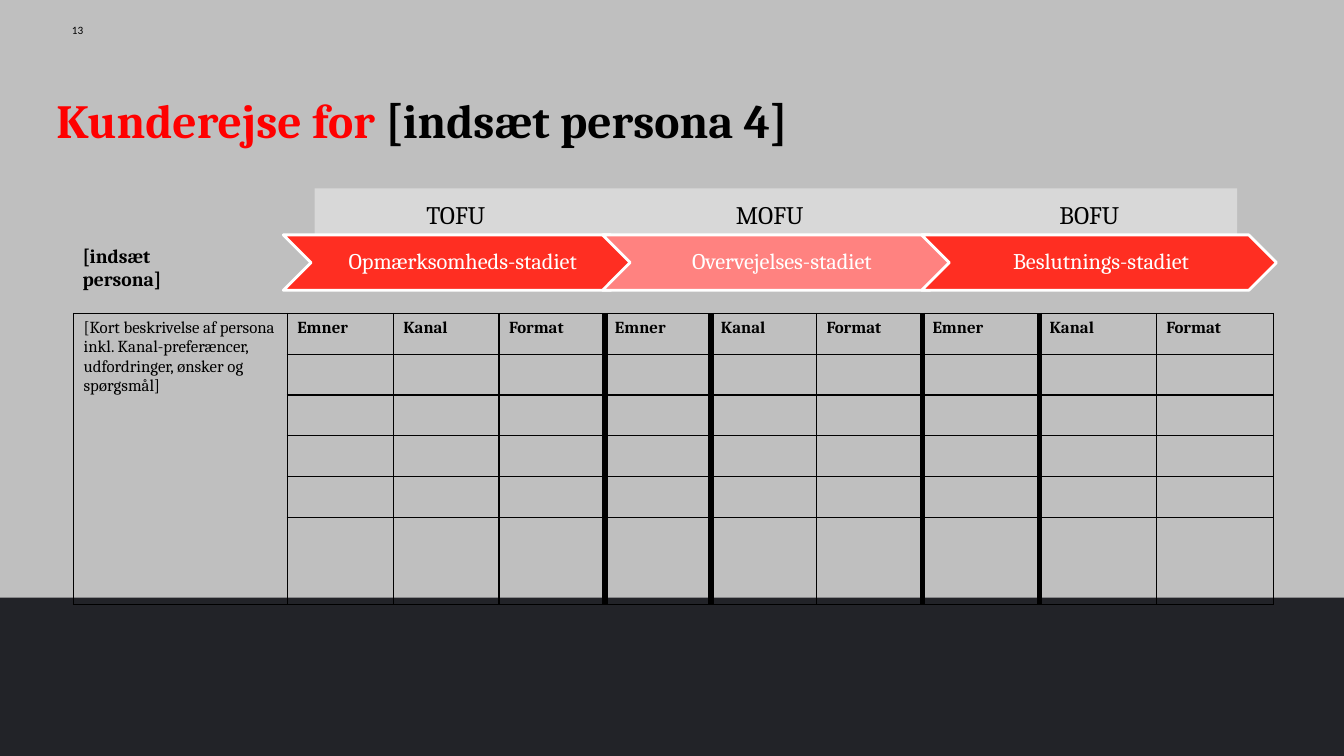
from lxml import etree
from pptx import Presentation, util as u
from pptx.dml.color import RGBColor
from pptx.enum import shapes, text
from pptx.oxml.ns import qn

BLACK, WHITE, GREY, RED = "000000", "FFFFFF", "BFBFBF", "FF0000"
SLIDE_W, SLIDE_H = 13.33, 7.5
CELL_INSETS = (0.1, 0.05, 0.1, 0.05)
# Stage: label, label left and width, name, colour
STAGES = [
    ("TOFU", 4.13, 0.88, "Opmærksomheds-stadiet", "FF2E22"),
    ("MOFU", 7.2, 0.97, "Overvejelses-stadiet", "FF8280"),
    ("BOFU", 10.41, 0.9, "Beslutnings-stadiet", "FF2E22"),
]
TOPICS = ["Emner", "Kanal", "Format"]
DESCRIPTION = ("[Kort beskrivelse af persona inkl. Kanal-preferæncer, "
               "udfordringer, ønsker og spørgsmål]")


def color(value):
    return RGBColor.from_string(value)


def inches(box):
    return [u.Inches(length) for length in box]


def style_font(paragraph, size, bold=False, fill=BLACK, name="Cambria"):
    font = paragraph.font
    font.name, font.size, font.bold = name, u.Pt(size), bold
    font.color.rgb = color(fill)


def set_frame(frame, insets, anchor):
    frame.word_wrap = True
    frame.auto_size = text.MSO_AUTO_SIZE.NONE
    frame.vertical_anchor = anchor
    (frame.margin_left, frame.margin_top,
     frame.margin_right, frame.margin_bottom) = inches(insets)


def add_label(slide, box, words, size, insets=CELL_INSETS,
              anchor=text.MSO_ANCHOR.TOP, align=text.PP_ALIGN.LEFT, **font):
    frame = slide.shapes.add_textbox(*inches(box)).text_frame
    set_frame(frame, insets, anchor)
    paragraph = frame.paragraphs[0]
    paragraph.text = words
    paragraph.alignment = align
    style_font(paragraph, size, **font)
    return paragraph


def add_block(slide, box, fill, kind=shapes.MSO_SHAPE.RECTANGLE):
    block = slide.shapes.add_shape(kind, *inches(box))
    block.shadow.inherit = False
    block.fill.solid()
    block.fill.fore_color.rgb = color(fill)
    block.line.fill.background()
    return block


def place_title(slide, box):
    title = slide.shapes.title
    title.left, title.top, title.width, title.height = inches(box)
    title.fill.solid()
    title.fill.fore_color.rgb = color(GREY)
    set_frame(title.text_frame, (0, 0, 0, 0), text.MSO_ANCHOR.BOTTOM)
    paragraph = title.text_frame.paragraphs[0]
    paragraph.alignment = text.PP_ALIGN.LEFT
    paragraph.line_spacing = 1.03
    style_font(paragraph, 34, bold=True)
    for words, fill in (("Kunderejse for ", RED), ("[indsæt persona 4]", BLACK)):
        run = paragraph.add_run()
        run.text = words
        run.font.color.rgb = color(fill)


def add_stages(slide, box):
    left, top, width, height = box
    chevron_w = 3.52
    step = (width - chevron_w) / (len(STAGES) - 1)
    # Band behind the funnel labels
    add_block(slide, (left + 0.31, top - 0.46, 9.15, 0.76), "D8D8D8")
    for index, (label, label_left, label_w, name, fill) in enumerate(STAGES):
        x = left + index * step
        chevron = add_block(slide, (x, top, chevron_w, height), fill,
                            shapes.MSO_SHAPE.CHEVRON)
        chevron.adjustments[0] = 0.5
        chevron.line.color.rgb = color(WHITE)
        chevron.line.width = u.Pt(2)
        stage = add_label(slide, (x + 0.38, top, 2.75, height), name, 16,
                          insets=(0.07, 0.02, 0.02, 0.02),
                          anchor=text.MSO_ANCHOR.MIDDLE,
                          align=text.PP_ALIGN.CENTER, fill=WHITE)
        stage.line_spacing = 0.9
        add_label(slide, (label_left, top - 0.4, label_w, 0.4), label, 18)


def set_borders(cell, widths):
    properties = cell._tc.get_or_add_tcPr()
    for position, (side, width) in enumerate(zip("LRTB", widths)):
        line = etree.Element(qn(f"a:ln{side}"), w=str(u.Pt(width)))
        fill = etree.SubElement(line, qn("a:solidFill"))
        etree.SubElement(fill, qn("a:srgbClr"), val=BLACK)
        properties.insert(position, line)


def add_journey_table(slide, box, rows=6):
    headings = [DESCRIPTION] + TOPICS * len(STAGES)
    widths = [2.12] + [1.05] * 6 + [1.16] * 3
    thick_edges = {4, 5, 7, 8}  # both sides of the later "Emner" columns
    table = slide.shapes.add_table(rows, len(headings), *inches(box)).table
    table.first_row = table.horz_banding = False
    for column, width in zip(table.columns, widths):
        column.width = u.Inches(width)
    for row_index, row in enumerate(table.rows):
        row.height = u.Inches(box[3] / rows)
        for col, cell in enumerate(row.cells):
            cell.fill.background()
            edges = [4.5 if edge in thick_edges else 1 for edge in (col, col + 1)]
            set_borders(cell, edges + [1, 1])
            paragraph = cell.text_frame.paragraphs[0]
            if row_index == 0:
                paragraph.text = headings[col]
            style_font(paragraph, 12, bold=row_index == 0 and col > 0)
    # The persona description spans every row
    table.cell(0, 0).merge(table.cell(rows - 1, 0))


def build_journey_slide(deck):
    slide = deck.slides.add_slide(deck.slide_layouts[5])
    slide.background.fill.solid()
    slide.background.fill.fore_color.rgb = color(GREY)
    # Footer band and page number
    add_block(slide, (0, 5.93, SLIDE_W, SLIDE_H - 5.93), "222328")
    add_label(slide, (0.56, 0.13, 0.42, 0.23), "13", 8, insets=(0, 0, 0, 0),
              anchor=text.MSO_ANCHOR.BOTTOM, align=text.PP_ALIGN.CENTER,
              name="Calibri")
    place_title(slide, (0.56, 0.44, 11.93, 1.03))
    # Funnel and persona
    add_stages(slide, (2.81, 2.33, 9.85, 0.55))
    add_journey_table(slide, (0.73, 3.11, 11.92, 2.43))
    add_label(slide, (0.72, 2.37, 1.49, 0.57), "[indsæt persona]", 14, bold=True)


def main():
    deck = Presentation()
    deck.slide_width, deck.slide_height = inches((SLIDE_W, SLIDE_H))
    build_journey_slide(deck)
    deck.save("out.pptx")


if __name__ == "__main__":
    main()
